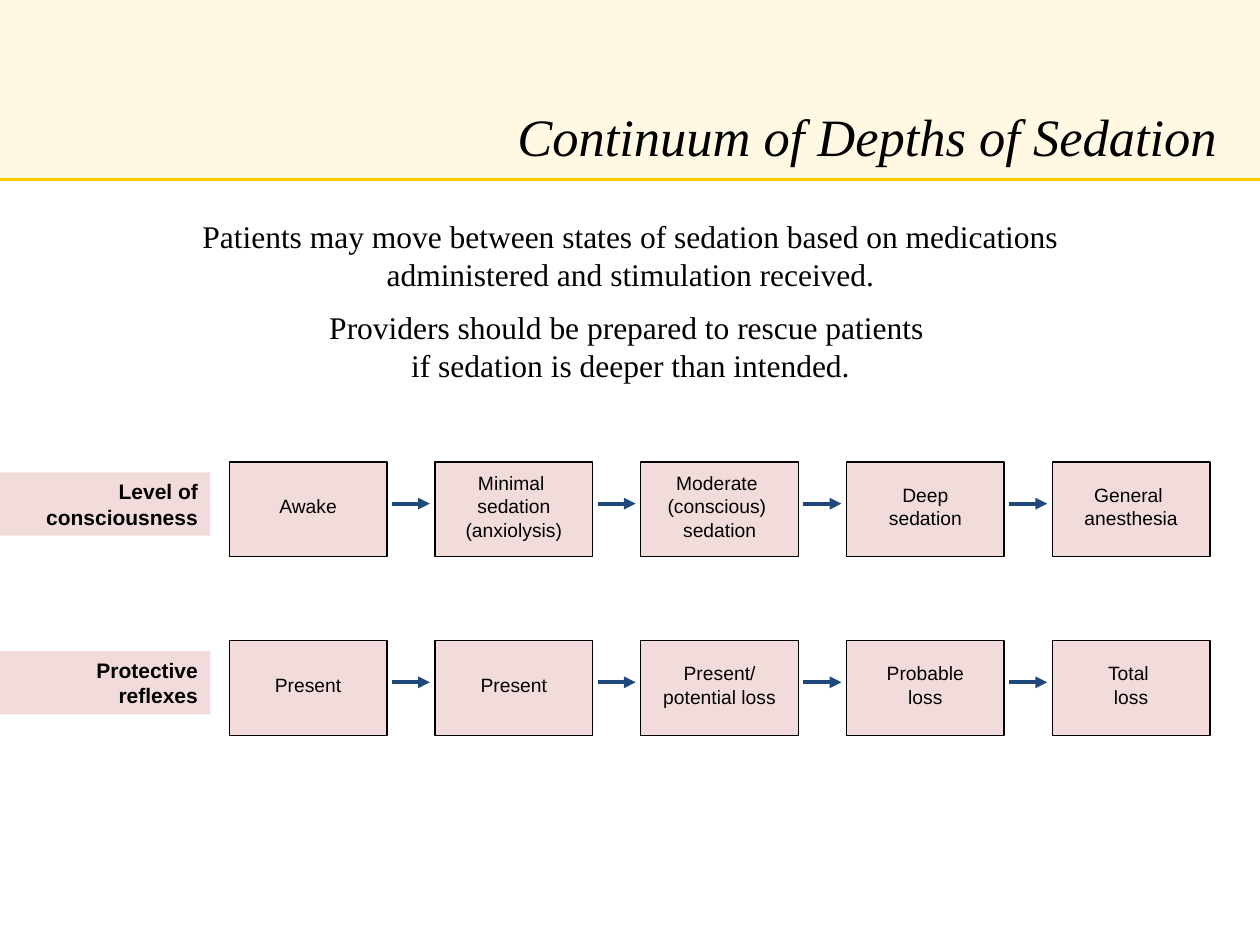
from dataclasses import dataclass

from lxml.etree import SubElement
from pptx import Presentation
from pptx.dml.color import RGBColor as RGB
from pptx.enum.shapes import MSO_CONNECTOR as Connector, MSO_SHAPE as Shape
from pptx.enum.text import MSO_ANCHOR as Anchor, PP_ALIGN as Align
from pptx.oxml.ns import qn
from pptx.util import Inches, Pt


@dataclass(frozen=True)
class Theme:
    ink: str = "000000"
    gold: str = "FFCD00"
    pink: str = "F2DCDB"
    navy: str = "1F497D"
    serif: str = "Times New Roman"
    sans: str = "Arial"
    title: float = 30
    body: float = 18
    label: float = 12
    stage: float = 11


@dataclass(frozen=True)
class Box:
    left: float
    top: float
    width: float
    height: float

    def share(self, x, y, w, h):
        """Return a box given as shares of this one."""
        return Box(self.left + x * self.width, self.top + y * self.height,
                   w * self.width, h * self.height)

    def emu(self):
        return [Inches(v) for v in (self.left, self.top, self.width, self.height)]


THEME = Theme()
PAGE = Box(0, 0, 10, 7.5)
STAGES = 5
TITLE = "Continuum of Depths of Sedation"
MESSAGE = [
    "Patients may move between states of sedation based on medications "
    "administered and stimulation received.",
    "Providers should be prepared to rescue patients \vif sedation is deeper than intended.",
]
# Row top as a share of the page, row label, lines of each stage
ROWS = [
    (0.489, "Level of consciousness",
     [["Awake"], ["Minimal ", "sedation", "(anxiolysis)"],
      ["Moderate ", "(conscious) ", "sedation"], ["Deep", "sedation"],
      ["General ", "anesthesia"]]),
    (0.678, "Protective reflexes",
     [["Present"], ["Present"], ["Present/", "potential loss"],
      ["Probable", "loss"], ["Total ", "loss"]]),
]


def write(frame, lines, align, font_format, frame_format=None, gap=0):
    for key, value in {"word_wrap": True, **(frame_format or {})}.items():
        setattr(frame, key, value)
    for i, line in enumerate(lines):
        paragraph = frame.paragraphs[0] if i == 0 else frame.add_paragraph()
        paragraph.text = line
        paragraph.alignment = align
        paragraph.space_before = Pt(gap if i else 0)
        for run in paragraph.runs:
            run.font.color.rgb = RGB.from_string(THEME.ink)
            for key, value in font_format.items():
                setattr(run.font, key, value)


def add_panel(slide, box, color, outline=None):
    panel = slide.shapes.add_shape(Shape.RECTANGLE, *box.emu())
    panel.shadow.inherit = False
    panel.fill.solid()
    panel.fill.fore_color.rgb = RGB.from_string(color)
    if outline:
        panel.line.color.rgb = RGB.from_string(outline)
        panel.line.width = Pt(0.75)
    else:
        panel.line.fill.background()
    return panel


def add_rule(slide, box, color, weight, arrow=False):
    left, top, width, _ = box.emu()
    rule = slide.shapes.add_connector(Connector.STRAIGHT, left, top, left + width, top)
    rule.line.color.rgb = RGB.from_string(color)
    rule.line.width = Pt(weight)
    properties = rule._element.spPr
    if arrow:
        SubElement(properties.find(qn("a:ln")), qn("a:tailEnd"), type="triangle")
    SubElement(properties, qn("a:effectLst"))


def add_header(slide, box):
    # Translucent band with a rule along its lower edge
    band = add_panel(slide, box, THEME.gold)
    tint = next(band._element.spPr.iter(qn("a:srgbClr")))
    SubElement(tint, qn("a:alpha"), val="11000")
    add_rule(slide, box.share(0, 1, 1, 0), THEME.gold, 1.75)
    # Title
    title = slide.shapes.add_textbox(*box.share(0.08, 0.53, 0.896, 0.4).emu())
    write(title.text_frame, [TITLE], Align.RIGHT,
          {"name": THEME.serif, "size": Pt(THEME.title), "italic": True},
          {"vertical_anchor": Anchor.BOTTOM, "margin_bottom": 0})


def add_message(slide, box):
    message = slide.shapes.add_textbox(*box.emu())
    write(message.text_frame, MESSAGE, Align.CENTER,
          {"name": THEME.serif, "size": Pt(THEME.body)}, gap=9)


def add_continuum(slide, box, label, stages):
    # Row label
    tag = add_panel(slide, box.share(0, 0.11, 0.167, 0.67), THEME.pink)
    write(tag.text_frame, [label], Align.RIGHT,
          {"name": THEME.sans, "size": Pt(THEME.label), "bold": True},
          {"vertical_anchor": Anchor.MIDDLE})
    # Stages in equal columns, joined by arrows
    grid = box.share(0.182, 0, 0.8165, 1)
    column = 1 / STAGES
    for i, lines in enumerate(stages):
        cell = grid.share(i * column, 0, column, 1)
        stage = add_panel(slide, cell.share(0, 0, 0.766, 1), THEME.pink, THEME.ink)
        write(stage.text_frame, lines, Align.CENTER,
              {"name": THEME.sans, "size": Pt(THEME.stage)},
              {"vertical_anchor": Anchor.MIDDLE, "margin_left": 0, "margin_right": 0,
               "margin_top": 0, "margin_bottom": Inches(0.05)})
        if i < STAGES - 1:
            add_rule(slide, cell.share(0.79, 0.44, 0.185, 0), THEME.navy, 2.25, arrow=True)


def main():
    deck = Presentation()
    deck.slide_width, deck.slide_height = Inches(PAGE.width), Inches(PAGE.height)
    slide = deck.slides.add_slide(deck.slide_layouts[6])
    add_header(slide, PAGE.share(0, 0, 1, 0.19))
    add_message(slide, PAGE.share(0.092, 0.223, 0.817, 0.195))
    for top, label, stages in ROWS:
        add_continuum(slide, PAGE.share(0, top, 1, 0.1), label, stages)
    deck.save("out.pptx")


if __name__ == "__main__":
    main()
